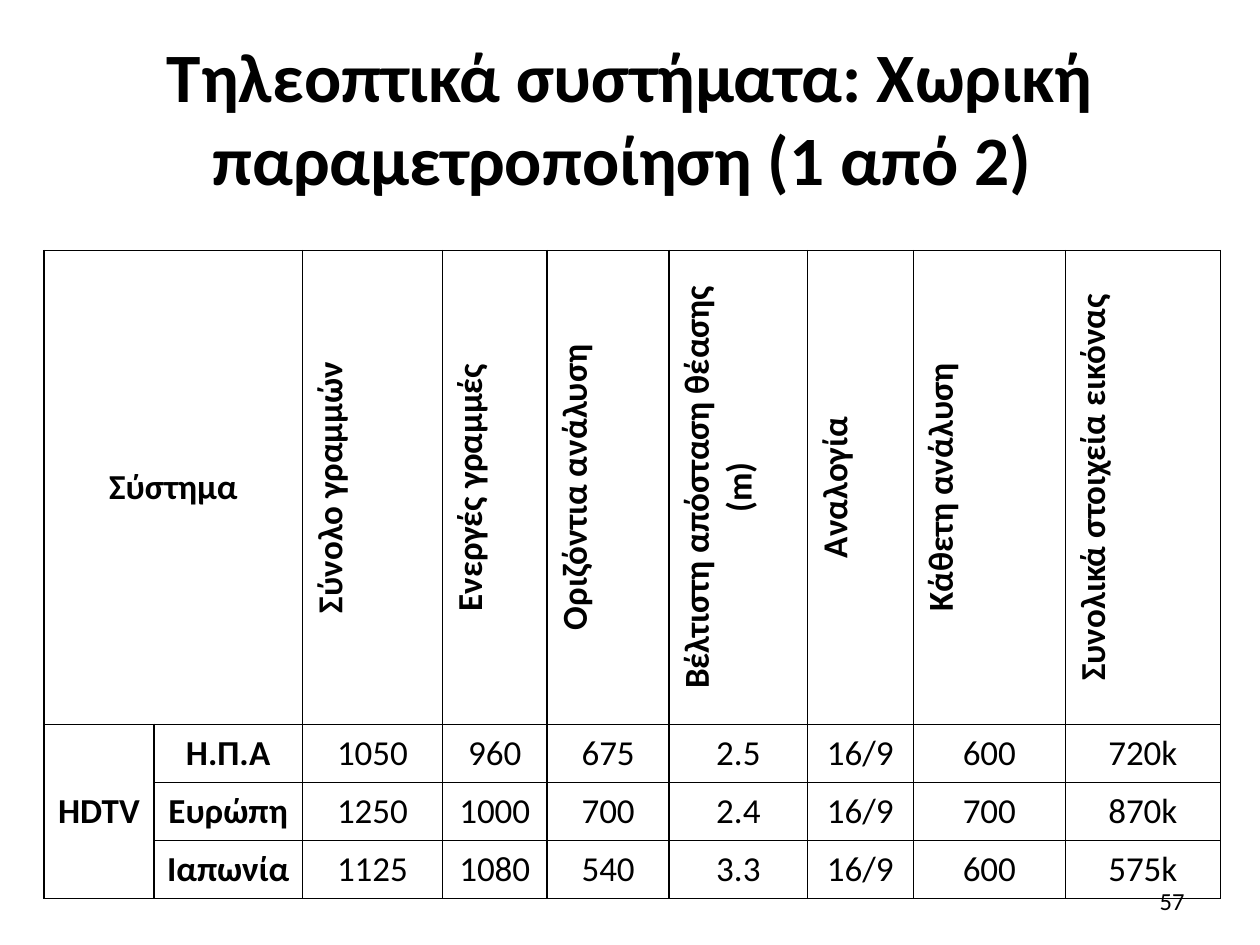
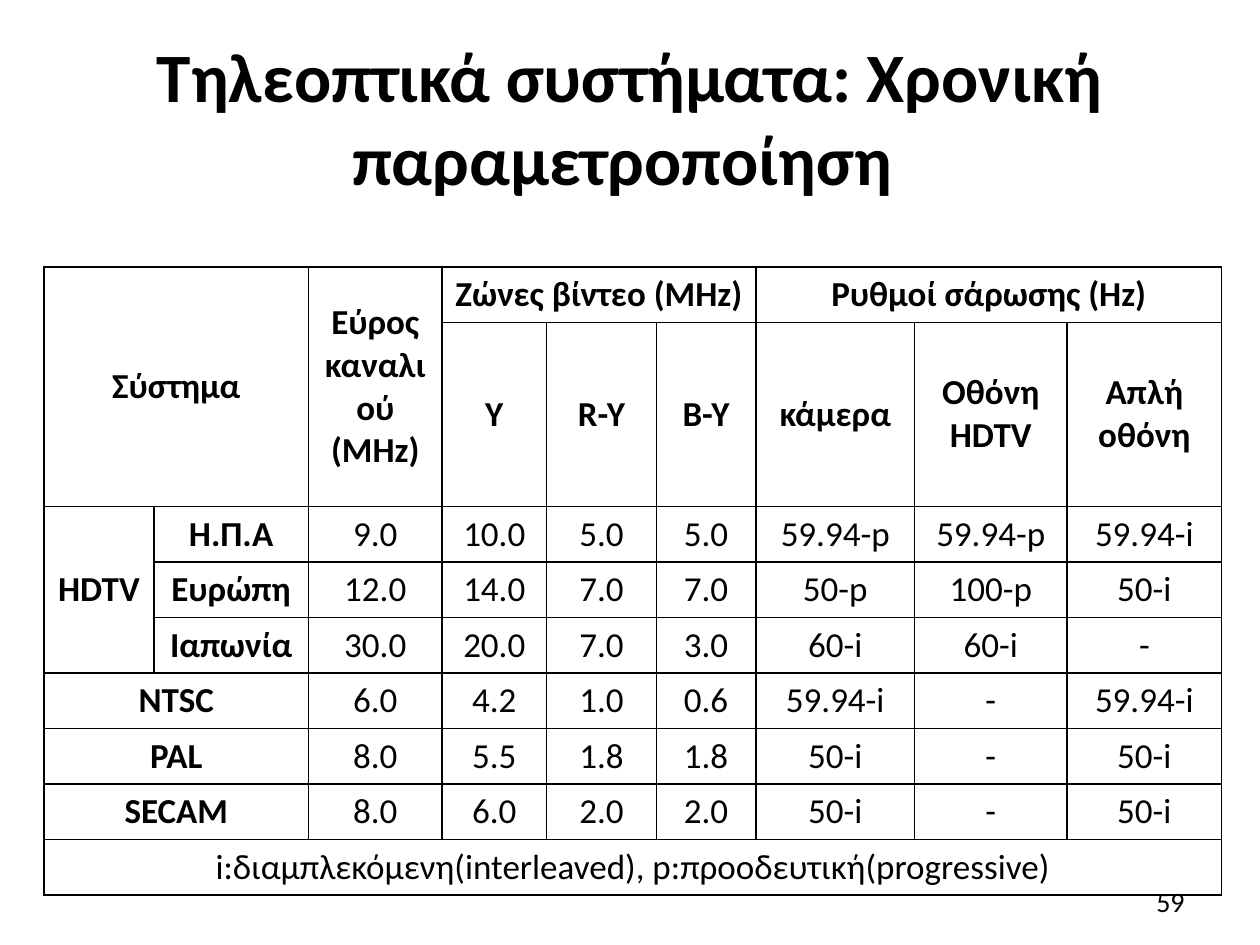
from pptx import Presentation
from pptx.dml.color import RGBColor
from pptx.enum.text import MSO_ANCHOR, MSO_AUTO_SIZE, PP_ALIGN
from pptx.oxml import parse_xml
from pptx.oxml.ns import nsdecls
from pptx.util import Cm, Pt

COLORS = {"text": "000000", "border": "000000"}
FONT = "Calibri"
TABLE_LEFT = 0.89

# Columns and rows are in centimetres; a span is row, column, rows, columns
PAGES = [
    {
        "title": "Τηλεοπτικά συστήματα: Χωρική παραμετροποίηση (1 από 2) ",
        "number": "57", "number_size": 14,
        "top": 5.05,
        "columns": [2.21, 3, 2.82, 2.11, 2.46, 2.79, 2.13, 3.07, 3.12],
        "rows": [5.16] + [1.17] * 3,
        "header_rows": 1, "vertical_header": True,
        "spans": [(0, 0, 1, 2), (1, 0, 3, 1)],
        "cells": [
            ["Σύστημα", "", "Σύνολο γραμμών", "Ενεργές γραμμές", "Οριζόντια ανάλυση",
             "Βέλτιστη απόσταση θέασης (m)", "Αναλογία", "Κάθετη ανάλυση",
             "Συνολικά στοιχεία εικόνας"],
            ["ΗDTV", "Η.Π.Α", "1050", "960", "675", "2.5", "16/9", "600", "720k"],
            ["", "Ευρώπη", "1250", "1000", "700", "2.4", "16/9", "700", "870k"],
            ["", "Ιαπωνία", "1125", "1080", "540", "3.3", "16/9", "600", "575k"],
        ],
    },
    {
        "title": "Τηλεοπτικά συστήματα: Χρονική παραμετροποίηση ",
        "number": "59", "number_size": 16,
        "top": 5.38,
        "columns": [2.21, 3.12, 2.69, 2.11, 2.21, 2.01, 3.2, 3.07, 3.12],
        "rows": [1.04] * 9,
        "header_rows": 2, "vertical_header": False,
        "spans": [(0, 0, 2, 2), (0, 2, 2, 1), (0, 3, 1, 3), (0, 6, 1, 3), (2, 0, 3, 1),
                  (5, 0, 1, 2), (6, 0, 1, 2), (7, 0, 1, 2), (8, 0, 1, 9)],
        "cells": [
            ["Σύστημα", "", "Εύρος καναλιού (MHz)", "Ζώνες βίντεο (ΜΗz)", "", "",
             "Ρυθμοί σάρωσης (Hz)", "", ""],
            ["", "", "", "Y", "R-Y", "B-Y", "κάμερα", "Οθόνη HDTV", "Απλή οθόνη"],
            ["ΗDTV", "Η.Π.Α", "9.0", "10.0", "5.0", "5.0", "59.94-p", "59.94-p", "59.94-i"],
            ["", "Ευρώπη", "12.0", "14.0", "7.0", "7.0", "50-p", "100-p", "50-i"],
            ["", "Ιαπωνία", "30.0", "20.0", "7.0", "3.0", "60-i", "60-i", "-"],
            ["NTSC", "", "6.0", "4.2", "1.0", "0.6", "59.94-i", "-", "59.94-i"],
            ["PAL", "", "8.0", "5.5", "1.8", "1.8", "50-i", "-", "50-i"],
            ["SECAM", "", "8.0", "6.0", "2.0", "2.0", "50-i", "-", "50-i"],
            ["i:διαμπλεκόμενη(interleaved), p:προοδευτική(progressive)"] + [""] * 8,
        ],
    },
]


def write(frame, text, size, bold=False, align=PP_ALIGN.CENTER):
    frame.text = text
    para = frame.paragraphs[0]
    para.alignment = align
    for span in para.runs:
        span.font.name = FONT
        span.font.size = Pt(size)
        span.font.bold = bold
        span.font.color.rgb = RGBColor.from_string(COLORS["text"])


def add_borders(cell):
    properties = cell._tc.get_or_add_tcPr()
    for index, side in enumerate(("lnL", "lnR", "lnT", "lnB")):
        properties.insert(index, parse_xml(
            f'<a:{side} {nsdecls("a")} w="12700"><a:solidFill>'
            f'<a:srgbClr val="{COLORS["border"]}"/></a:solidFill></a:{side}>'))


deck = Presentation()
deck.slide_width = Cm(25.4)
deck.slide_height = Cm(19.05)

for content in PAGES:
    page = deck.slides.add_slide(deck.slide_layouts[5])

    # Title
    title = page.shapes.title
    title.left, title.top, title.width, title.height = Cm(1.27), Cm(0.76), Cm(22.86), Cm(3.18)
    title.text_frame.auto_size = MSO_AUTO_SIZE.NONE
    title.text_frame.vertical_anchor = MSO_ANCHOR.MIDDLE
    write(title.text_frame, content["title"], 39.6, bold=True)

    # Table grid
    columns, rows = content["columns"], content["rows"]
    table = page.shapes.add_table(
        len(rows), len(columns), Cm(TABLE_LEFT), Cm(content["top"]),
        Cm(sum(columns)), Cm(sum(rows))).table
    table.first_row = False
    table.horz_banding = False
    for column, width in zip(table.columns, columns):
        column.width = Cm(width)
    for row, height in zip(table.rows, rows):
        row.height = Cm(height)
    for top, left, height, width in content["spans"]:
        table.cell(top, left).merge(table.cell(top + height - 1, left + width - 1))

    # Cells: headers and system names are bold, the full-width note is not
    for r, texts in enumerate(content["cells"]):
        is_header = r < content["header_rows"]
        is_note = (r, 0, 1, len(columns)) in content["spans"]
        for c, text in enumerate(texts):
            cell = table.cell(r, c)
            cell.fill.background()
            add_borders(cell)
            cell.vertical_anchor = MSO_ANCHOR.MIDDLE
            write(cell.text_frame, text, 20, bold=is_header or (c < 2 and not is_note))
            if is_header and content["vertical_header"] and c >= 2:
                cell._tc.get_or_add_tcPr().set("vert", "vert270")

    # Page number
    box = page.shapes.add_textbox(Cm(18.21), Cm(17.65), Cm(5.92), Cm(1.02))
    box.text_frame.word_wrap = True
    box.text_frame.vertical_anchor = MSO_ANCHOR.MIDDLE
    write(box.text_frame, content["number"], content["number_size"], align=PP_ALIGN.RIGHT)

deck.save("out.pptx")
